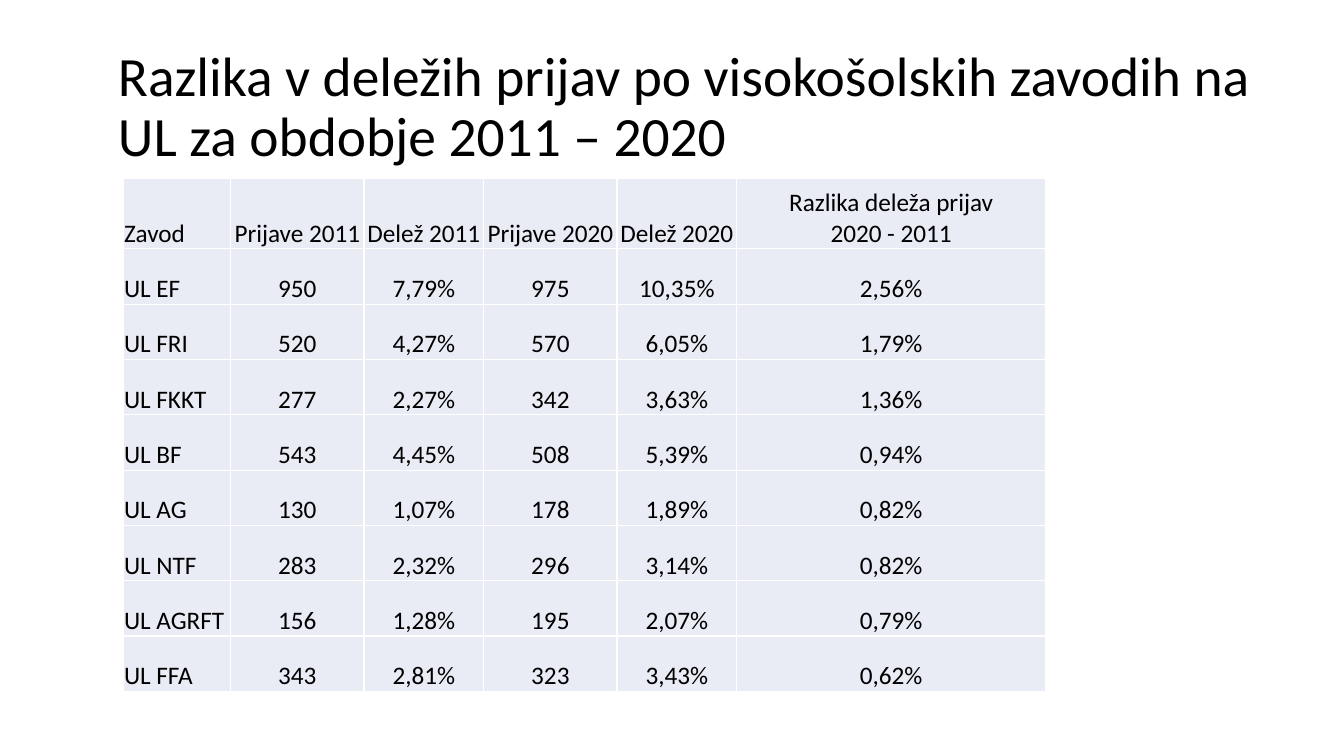
from lxml import etree
from pptx import Presentation
from pptx import util as u
from pptx.dml import color
from pptx.enum import text
from pptx.oxml import ns

FONT = "Calibri"
INK, PALE, WHITE = "000000", "E9EBF5", "FFFFFF"
TITLE = "Razlika v deležih prijav po visokošolskih zavodih na UL za obdobje 2011 – 2020"
HEAD = ["Zavod", "Prijave 2011", "Delež 2011", "Prijave 2020", "Delež 2020",
        "Razlika deleža prijav\n2020 - 2011"]
ROWS = [
    ["UL EF", "950", "7,79%", "975", "10,35%", "2,56%"],
    ["UL FRI", "520", "4,27%", "570", "6,05%", "1,79%"],
    ["UL FKKT", "277", "2,27%", "342", "3,63%", "1,36%"],
    ["UL BF", "543", "4,45%", "508", "5,39%", "0,94%"],
    ["UL AG", "130", "1,07%", "178", "1,89%", "0,82%"],
    ["UL NTF", "283", "2,32%", "296", "3,14%", "0,82%"],
    ["UL AGRFT", "156", "1,28%", "195", "2,07%", "0,79%"],
    ["UL FFA", "343", "2,81%", "323", "3,43%", "0,62%"],
]
WIDTHS = [1.07, 1.32, 1.19, 1.32, 1.19, 3.06]
HEIGHTS = [0.7] + [0.55] * len(ROWS)


def paint(target, shade):
    """Give a colour format the shade of a hex string."""
    target.rgb = color.RGBColor.from_string(shade)


def assign(item, values):
    """Set each attribute named in a dict."""
    for name, value in values.items():
        setattr(item, name, value)


def write(frame, words, size, align, space):
    """Fill a text frame and format each paragraph."""
    frame.text = words
    for para in frame.paragraphs:
        assign(para, {"alignment": align, "line_spacing": space})
        for run in para.runs:
            assign(run.font, {"name": FONT, "size": u.Pt(size), "bold": False})
            paint(run.font.color, INK)


def edge(cell):
    """Draw thin white borders on all sides of a cell."""
    props = cell._tc.get_or_add_tcPr()
    for side in ("a:lnL", "a:lnR", "a:lnT", "a:lnB"):
        line = etree.SubElement(props, ns.qn(side), w=str(u.Pt(1)))
        fill = etree.SubElement(line, ns.qn("a:solidFill"))
        etree.SubElement(fill, ns.qn("a:srgbClr"), val=WHITE)


def heading(slide, left, top, width, height):
    """Place the title in its box."""
    title = slide.shapes.title
    assign(title, {"left": u.Inches(left), "top": u.Inches(top),
                   "width": u.Inches(width), "height": u.Inches(height)})
    frame = title.text_frame
    assign(frame, {"word_wrap": True, "auto_size": text.MSO_AUTO_SIZE.NONE,
                   "vertical_anchor": text.MSO_ANCHOR.MIDDLE})
    write(frame, TITLE, 39.6, text.PP_ALIGN.LEFT, 0.9)


def grid(slide, left, top, width, height):
    """Place the table of applications in its box."""
    data = [HEAD] + ROWS
    box = [u.Inches(n) for n in (left, top, width, height)]
    table = slide.shapes.add_table(len(data), len(HEAD), *box).table
    assign(table, {"first_row": False, "horz_banding": False})
    for col, share in zip(table.columns, WIDTHS):
        col.width = u.Inches(width * share / sum(WIDTHS))
    for row, share in zip(table.rows, HEIGHTS):
        row.height = u.Inches(height * share / sum(HEIGHTS))
    inset = u.Inches(0.01)
    style = {"vertical_anchor": text.MSO_ANCHOR.BOTTOM, "margin_left": inset,
             "margin_top": inset, "margin_right": inset, "margin_bottom": 0}
    for r, line in enumerate(data):
        for c, words in enumerate(line):
            cell = table.cell(r, c)
            assign(cell, style)
            edge(cell)
            cell.fill.solid()
            paint(cell.fill.fore_color, PALE)
            align = text.PP_ALIGN.CENTER if c else text.PP_ALIGN.LEFT
            write(cell.text_frame, words, 18, align, 1.0)


def main():
    """Build the slide and save it."""
    deck = Presentation()
    assign(deck, {"slide_width": u.Inches(13.33), "slide_height": u.Inches(7.5)})
    slide = deck.slides.add_slide(deck.slide_layouts[5])
    heading(slide, 1.07, 0.37, 11.5, 1.41)
    grid(slide, 1.22, 1.77, 9.15, 5.09)
    deck.save("out.pptx")


if __name__ == "__main__":
    main()
